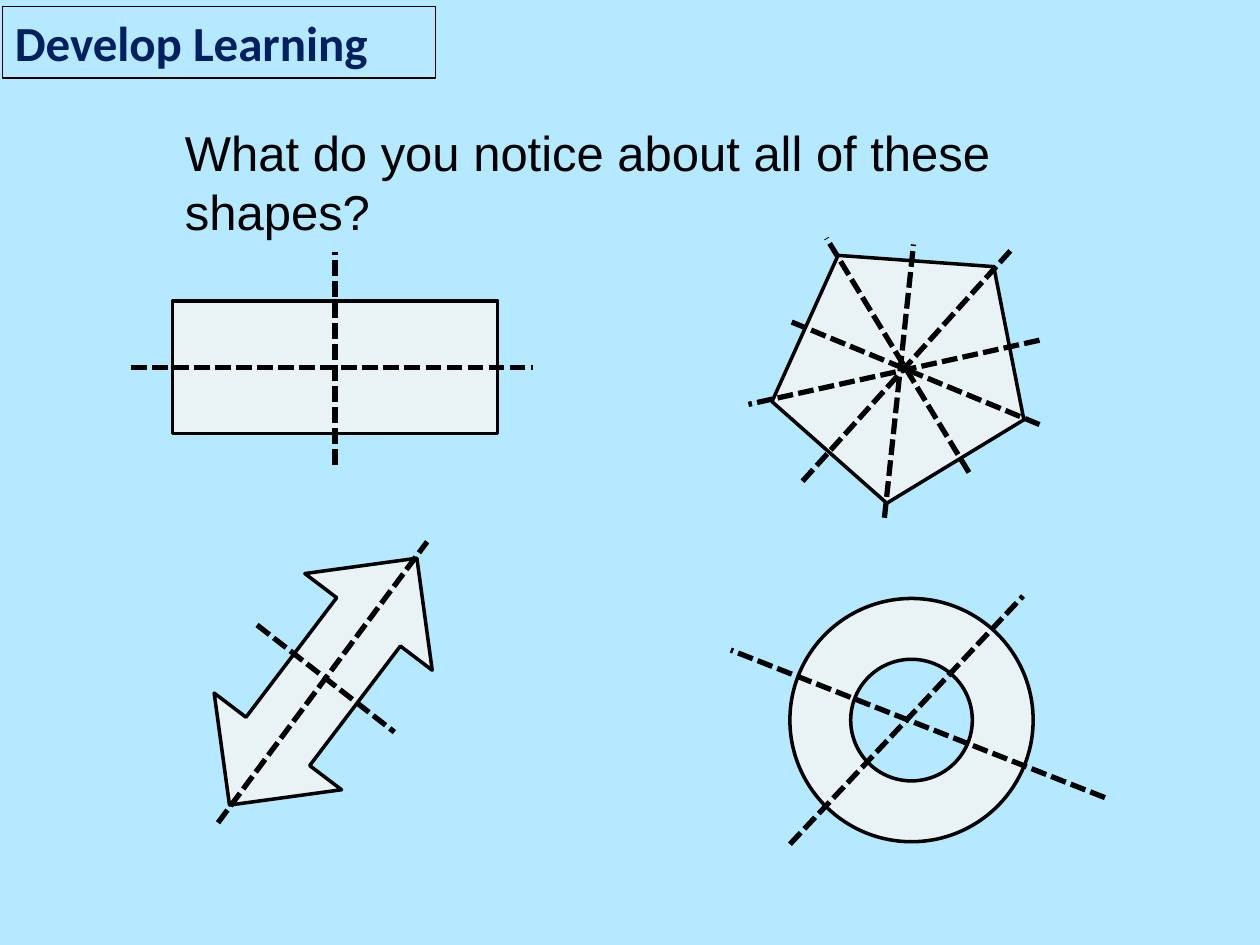
from pptx import Presentation
from pptx.dml.color import RGBColor
from pptx.enum import dml, shapes, text
from pptx.oxml.ns import qn
from pptx.util import Pt
from lxml import etree

SKY = RGBColor(0xB5, 0xE9, 0xFF)
PALE = RGBColor(0xE9, 0xF3, 0xF6)
NAVY = RGBColor(0x00, 0x20, 0x60)
BLACK = RGBColor(0, 0, 0)

SHAPE = shapes.MSO_SHAPE


def set_text(sp, words, font, color, bold=False):
    tf = sp.text_frame
    tf.word_wrap = True
    tf.vertical_anchor = text.MSO_ANCHOR.TOP
    p = tf.paragraphs[0]
    p.text = words
    p.alignment = text.PP_ALIGN.LEFT
    p.space_before = Pt(5.6)
    p.font.name = font
    p.font.size = Pt(28)
    p.font.bold = bold
    p.font.color.rgb = color


def add_outlined(s, kind, box, width):
    sp = s.shapes.add_shape(kind, *map(Pt, box))
    sp.shadow.inherit = False
    sp.fill.background()
    sp.line.color.rgb = BLACK
    sp.line.width = Pt(width)
    return sp


def add_heading(s, box):
    sp = add_outlined(s, SHAPE.RECTANGLE, box, 0.75)
    set_text(sp, "Develop Learning", "Calibri", NAVY, bold=True)


def add_question(s, box):
    sp = s.shapes.add_textbox(*map(Pt, box))
    set_text(sp, "What do you notice about all of these shapes?", "Arial", BLACK)


def add_symmetry_line(s, x1, y1, x2, y2):
    line = s.shapes.add_connector(
        shapes.MSO_CONNECTOR.STRAIGHT, Pt(x1), Pt(y1), Pt(x2), Pt(y2))
    line.line.color.rgb = BLACK
    line.line.width = Pt(3)
    line.line.dash_style = dml.MSO_LINE.SQUARE_DOT
    etree.SubElement(line._element.spPr, qn("a:effectLst"))


def add_symmetric_figure(s, kind, box, mirrors, rotation=0):
    """Draw a shape and its mirror lines, whose ends are offsets from the box centre."""
    left, top, width, height = box
    sp = add_outlined(s, kind, box, 2)
    sp.fill.solid()
    sp.fill.fore_color.rgb = PALE
    sp.rotation = rotation
    cx, cy = left + width / 2, top + height / 2
    for x1, y1, x2, y2 in mirrors:
        add_symmetry_line(s, cx + x1, cy + y1, cx + x2, cy + y2)


def main():
    prs = Presentation()
    prs.slide_width, prs.slide_height = Pt(720), Pt(540)
    s = prs.slides.add_slide(prs.slide_layouts[6])
    s.background.fill.solid()
    s.background.fill.fore_color.rgb = SKY

    add_heading(s, (1.4, 3.6, 247.7, 41))
    add_question(s, (98.6, 66.5, 566, 75))

    add_symmetric_figure(s, SHAPE.RECTANGLE, (98.6, 172, 185.8, 75.6), [
        (-116.6, 0.4, 113, 0.4),
        (0, 56, 0, -65.8),
    ])
    add_symmetric_figure(s, SHAPE.UP_DOWN_ARROW, (139, 301, 91.4, 177.1), [
        (-60.1, 80.6, 59.4, -80),
        (-37.8, -32.4, 40.7, 28.8),
    ], rotation=37.2)
    add_symmetric_figure(s, SHAPE.REGULAR_PENTAGON, (450, 134.6, 141.8, 141.8), [
        (-62.3, 69.5, 56.5, -62.2),
        (32.8, 64.5, -48.6, -69.4),
        (73.1, -11.1, -93.2, 25.6),
        (73.1, 37.1, -69.5, -21.9),
        (-15.5, 90.4, 1.1, -65.8),
    ], rotation=41.5)
    add_symmetric_figure(s, SHAPE.DONUT, (451.4, 342, 139, 139), [
        (110.5, 44.3, -103.3, -40),
        (-69.5, 70.9, 63.7, -70.9),
    ])
    prs.save("out.pptx")


if __name__ == "__main__":
    main()
